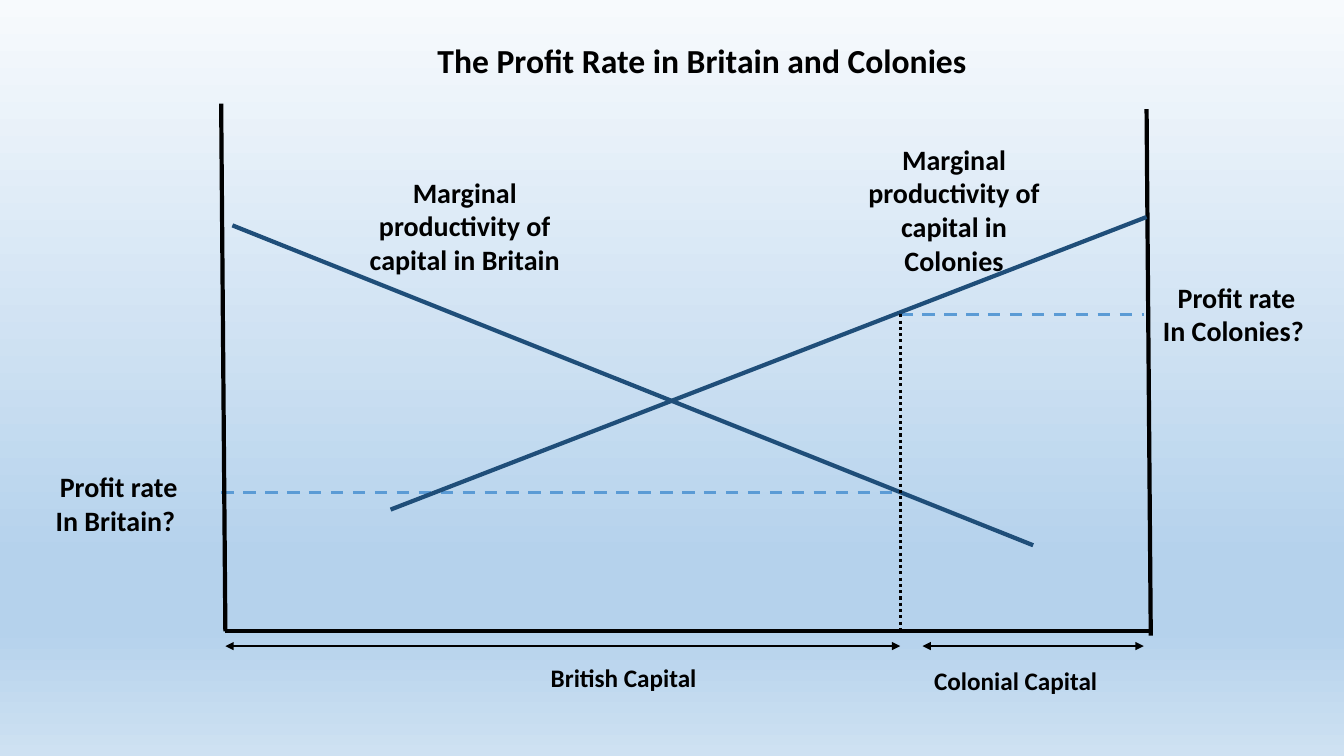
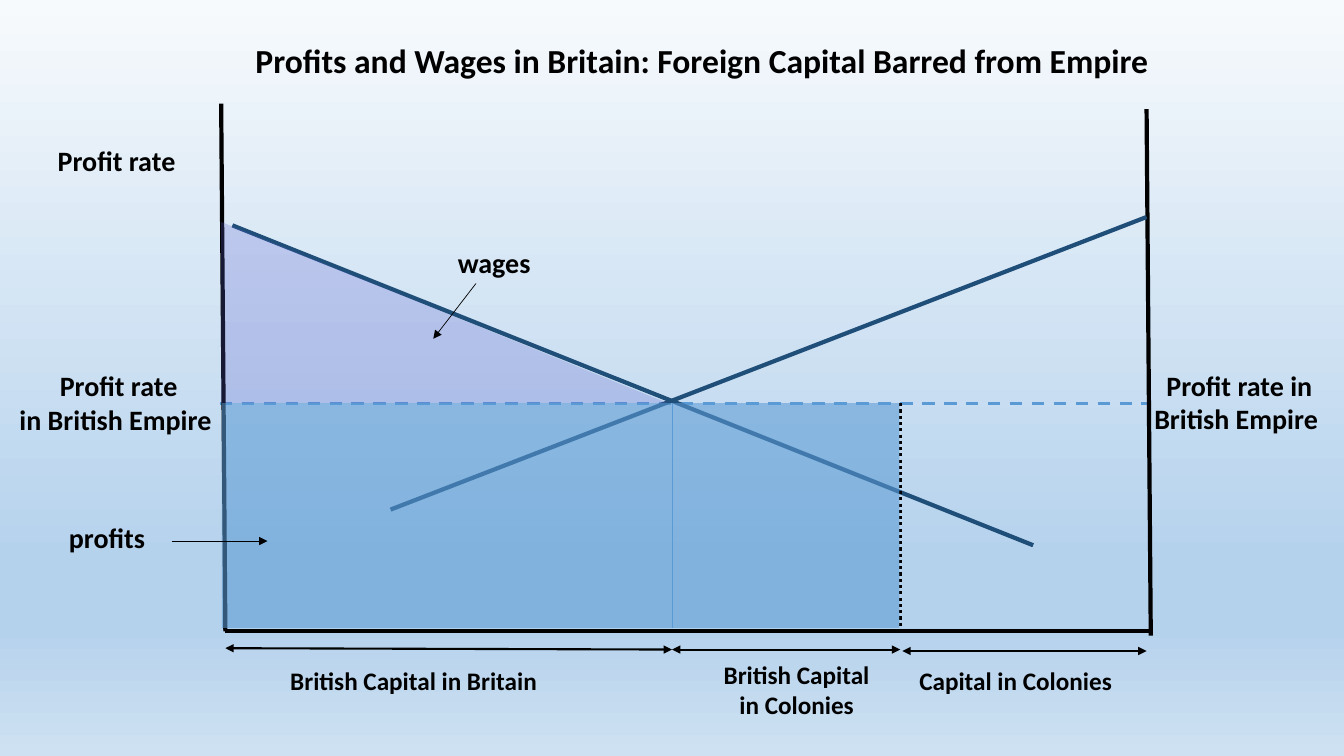
"""Two slides on profit rates and wages in Britain and its colonies."""
import pptx
import pptx.dml.color
import pptx.enum.dml
import pptx.enum.shapes
import pptx.enum.text
import pptx.oxml
import pptx.oxml.ns
import pptx.util

Pt = pptx.util.Pt
RGB = pptx.dml.color.RGBColor.from_string
qn = pptx.oxml.ns.qn
SHAPE = pptx.enum.shapes.MSO_SHAPE
DASH = pptx.enum.dml.MSO_LINE.DASH
DOT = pptx.enum.dml.MSO_LINE.ROUND_DOT

COLORS = {
    "ink": "000000", "curve": "1F4E79", "rate": "5B9BD5", "wages": "5F62D1",
    "sky": "F7FAFD", "deep": "B5D2EC", "pale": "CEE1F2",
}
BACKGROUND = [(0, "sky"), (74, "deep"), (83, "deep"), (100, "pale")]
LEFT, BASE, SPLIT, CROSS, RIGHT = 161, 451, 643, 480, 819
BRITAIN_RATE, COLONY_RATE, EMPIRE_RATE = 352, 224.5, 288


def add_text(s, text, box, size=20):
    sp = s.shapes.add_textbox(*[Pt(v) for v in box])
    tf = sp.text_frame
    tf.word_wrap = True
    tf.auto_size = pptx.enum.text.MSO_AUTO_SIZE.SHAPE_TO_FIT_TEXT
    for i, words in enumerate(text.split("\n")):
        p = tf.add_paragraph() if i else tf.paragraphs[0]
        p.alignment = pptx.enum.text.PP_ALIGN.CENTER
        r = p.add_run()
        r.text = words
        r.font.name = "Calibri"
        r.font.size = Pt(size)
        r.font.bold = True
        r.font.color.rgb = RGB(COLORS["ink"])


def add_line(s, ends, color="ink", width=3, dash=None, arrows=()):
    cx = s.shapes.add_connector(
        pptx.enum.shapes.MSO_CONNECTOR.STRAIGHT, *[Pt(v) for v in ends])
    cx.line.color.rgb = RGB(COLORS[color])
    cx.line.width = Pt(width)
    if dash:
        cx.line.dash_style = dash
    ln = cx.line._get_or_add_ln()
    for end in arrows:
        ln.append(pptx.oxml.parse_xml(
            f'<a:{end} {pptx.oxml.ns.nsdecls("a")} type="triangle"/>'))
    cx._element.spPr.append(pptx.oxml.parse_xml(
        f'<a:effectLst {pptx.oxml.ns.nsdecls("a")}/>'))


rate = dict(color="rate", width=2.25, dash=DASH)
drop = dict(width=2.25, dash=DOT)
span = dict(width=1.5, arrows=("headEnd", "tailEnd"))
pointer = dict(width=0.5, arrows=("tailEnd",))

diagram = [
    ((158, 74, LEFT, BASE), {}),
    ((LEFT, BASE, 821, BASE), {}),
    ((RIGHT, 78, 822, 454), {}),
    ((166, 161, 738, 389.5), dict(color="curve")),
    ((279, 364, RIGHT, 155), dict(color="curve")),
]

slides = [
    dict(
        title="The Profit Rate in Britain and Colonies",
        rates=[
            ((158, BRITAIN_RATE, SPLIT, BRITAIN_RATE), rate),
            ((SPLIT, COLONY_RATE, 817, COLONY_RATE), rate),
        ],
        spans=[
            ((SPLIT, COLONY_RATE, SPLIT, BASE), drop),
            ((LEFT, 461.5, SPLIT, 461.5), span),
            ((659, 461.5, 817, 461.5), span),
        ],
        labels=[
            (" British Capital", (345, 469.5, 197, 51), 18),
            (" Colonial Capital", (625, 471.5, 197, 51), 18),
            ("Marginal productivity of capital in Britain", (250.5, 121.5, 163, 80), 20),
            ("Marginal productivity of capital in Colonies", (600, 98, 163, 104), 20),
            (" Profit rate\nIn Britain?", (-19.5, 332, 204, 55.5), 20),
            (" Profit rate\nIn Colonies?", (779, 196.5, 204, 55.5), 20),
        ],
        areas=[],
        pointers=[],
    ),
    dict(
        title="Profits and Wages in Britain: Foreign Capital Barred from Empire",
        rates=[((157, EMPIRE_RATE, 822, EMPIRE_RATE), rate)],
        spans=[
            ((SPLIT, EMPIRE_RATE, SPLIT, BASE), drop),
            ((LEFT, 463, CROSS, 464), span),
            ((CROSS, 464, SPLIT, 464), span),
            ((644.5, 465, RIGHT, 465), span),
        ],
        labels=[
            (" British Capital in Britain", (161.5, 471.5, 264, 51), 18),
            (" British Capital\n in Colonies", (435, 467.5, 264, 72.5), 18),
            (" Capital in Colonies", (625, 471.5, 197, 51), 18),
            ("wages", (271.5, 172, 163, 31.5), 20),
            (" Profit rate", (-21, 99, 204, 31.5), 20),
            (" Profit rate\nin British Empire", (-19.5, 260, 204, 55.5), 20),
            (" Profit rate in\nBritish Empire", (781, 259.5, 204, 55.5), 20),
            ("profits", (-5, 368, 163, 31.5), 20),
        ],
        areas=[
            (SHAPE.RECTANGLE, (158.5, EMPIRE_RATE, 484, 160.5), "rate", 57),
            (SHAPE.RIGHT_TRIANGLE, (158, 158.5, 319, 129.5), "wages", 25),
        ],
        pointers=[
            ((340, 202.5, 309.5, 242), pointer),
            ((123, 386.5, 191, 386.5), pointer),
            ((CROSS, EMPIRE_RATE, CROSS, 448.5), dict(color="rate", width=0.5)),
        ],
    ),
]

prs = pptx.Presentation()
prs.slide_width, prs.slide_height = Pt(960), Pt(540)

fill = prs.slide_master.background.fill
fill.gradient()
fill.gradient_angle = 270
stops = next(prs.slide_master.element.iter(qn("a:gsLst")))
for stop in list(stops):
    stops.remove(stop)
for pos, color in BACKGROUND:
    stops.append(pptx.oxml.parse_xml(
        f'<a:gs {pptx.oxml.ns.nsdecls("a")} pos="{pos * 1000}">'
        f'<a:srgbClr val="{COLORS[color]}"/></a:gs>'))

for content in slides:
    s = prs.slides.add_slide(prs.slide_layouts[6])
    for ends, style in content["rates"] + diagram + content["spans"]:
        add_line(s, ends, **style)
    add_text(s, content["title"], (114, 25, 775, 36), size=24)
    for text, box, size in content["labels"]:
        add_text(s, text, box, size=size)
    for kind, box, color, opacity in content["areas"]:
        sp = s.shapes.add_shape(kind, *[Pt(v) for v in box])
        sp.shadow.inherit = False
        sp.line.fill.background()
        sp.fill.solid()
        sp.fill.fore_color.rgb = RGB(COLORS[color])
        next(sp._element.spPr.iter(qn("a:srgbClr"))).append(pptx.oxml.parse_xml(
            f'<a:alpha {pptx.oxml.ns.nsdecls("a")} val="{opacity * 1000}"/>'))
    for ends, style in content["pointers"]:
        add_line(s, ends, **style)

prs.save("out.pptx")
